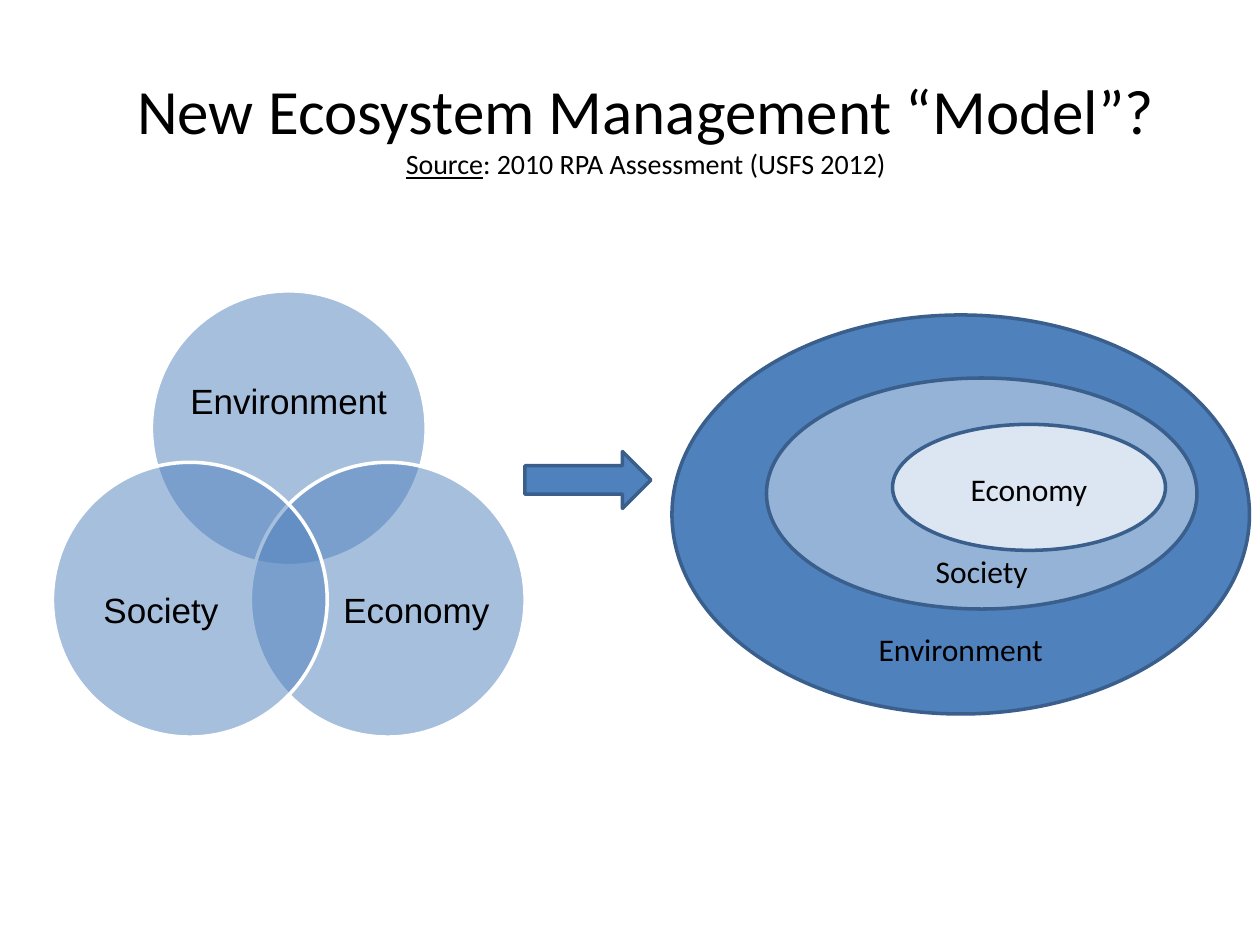
"""Build a slide that sets a Venn model beside a nested model of ecosystem management."""
import math

import lxml.etree
import pptx
import pptx.dml.color
import pptx.enum.shapes
import pptx.enum.text
import pptx.oxml.ns
import pptx.util

Pt = pptx.util.Pt
RGBColor = pptx.dml.color.RGBColor
SHAPE = pptx.enum.shapes.MSO_SHAPE

BLUE = RGBColor(0x4F, 0x81, 0xBD)
EDGE = RGBColor(0x3A, 0x5F, 0x8C)
MID = RGBColor(0x95, 0xB3, 0xD7)
PALE = RGBColor(0xDC, 0xE6, 0xF2)
WHITE = RGBColor(0xFF, 0xFF, 0xFF)
BLACK = RGBColor(0x00, 0x00, 0x00)


def add_form(shapes, kind, box, fill, edge):
    form = shapes.add_shape(kind, *map(Pt, box))
    form.shadow.inherit = False
    form.fill.solid()
    form.fill.fore_color.rgb = fill
    form.line.color.rgb = edge
    form.line.width = Pt(2)
    return form


def make_clear(form, percent):
    color = form._element.spPr.find(".//" + pptx.oxml.ns.qn("a:srgbClr"))
    alpha = lxml.etree.SubElement(color, pptx.oxml.ns.qn("a:alpha"))
    alpha.set("val", str(percent * 1000))


def add_run(para, text, size, font, under=False):
    run = para.add_run()
    run.text = text
    run.font.size = Pt(size)
    run.font.name = font
    run.font.underline = under
    run.font.color.rgb = BLACK


def add_text(shapes, box):
    frame = shapes.add_textbox(*map(Pt, box)).text_frame
    frame.word_wrap = True
    frame.vertical_anchor = pptx.enum.text.MSO_ANCHOR.MIDDLE
    frame.margin_left = frame.margin_right = 0
    frame.margin_top = frame.margin_bottom = 0
    para = frame.paragraphs[0]
    para.alignment = pptx.enum.text.PP_ALIGN.CENTER
    return para


def add_label(shapes, text, x, y, size, font):
    wide, high = 116, 30
    para = add_text(shapes, (x - wide / 2, y - high / 2, wide, high))
    add_run(para, text, size, font)


def add_title(shapes):
    para = add_text(shapes, (54, 30, 630, 84))
    add_run(para, "New Ecosystem Management “Model”?", 36, "Calibri")
    para.add_line_break()
    add_run(para, "Source", 16, "Calibri", True)
    add_run(para, ": 2010 RPA Assessment (USFS 2012)", 16, "Calibri")


def add_venn(shapes):
    group = shapes.add_group_shape().shapes
    mid_x, mid_y, reach, size = 165, 310, 65.3, 157
    parts = (
        ("Environment", -90, 0, -81),
        ("Economy", 30, 73, 38.5),
        ("Society", 150, -73, 38.5),
    )
    for text, angle, shift_x, shift_y in parts:
        turn = math.radians(angle)
        left = mid_x + reach * math.cos(turn) - size / 2
        top = mid_y + reach * math.sin(turn) - size / 2
        disc = add_form(group, SHAPE.OVAL, (left, top, size, size), BLUE, WHITE)
        make_clear(disc, 50)
        add_label(group, text, mid_x + shift_x, mid_y + shift_y, 20, "Arial")


def add_nest(shapes):
    rings = (
        ("Environment", (384, 180, 330, 228), BLUE, 371),
        ("Society", (438, 216, 246, 132), MID, 326),
        ("Economy", (510, 242.5, 156, 72), PALE, 279.5),
    )
    for text, box, fill, y in rings:
        add_form(shapes, SHAPE.OVAL, box, fill, EDGE)
        add_label(shapes, text, box[0] + box[2] / 2, y, 18, "Calibri")


def main():
    deck = pptx.Presentation()
    deck.slide_width, deck.slide_height = Pt(720), Pt(540)
    shapes = deck.slides.add_slide(deck.slide_layouts[6]).shapes
    add_title(shapes)
    add_form(shapes, SHAPE.RIGHT_ARROW, (300, 258, 72, 32.5), BLUE, EDGE)
    add_nest(shapes)
    add_venn(shapes)
    deck.save("out.pptx")


if __name__ == "__main__":
    main()
